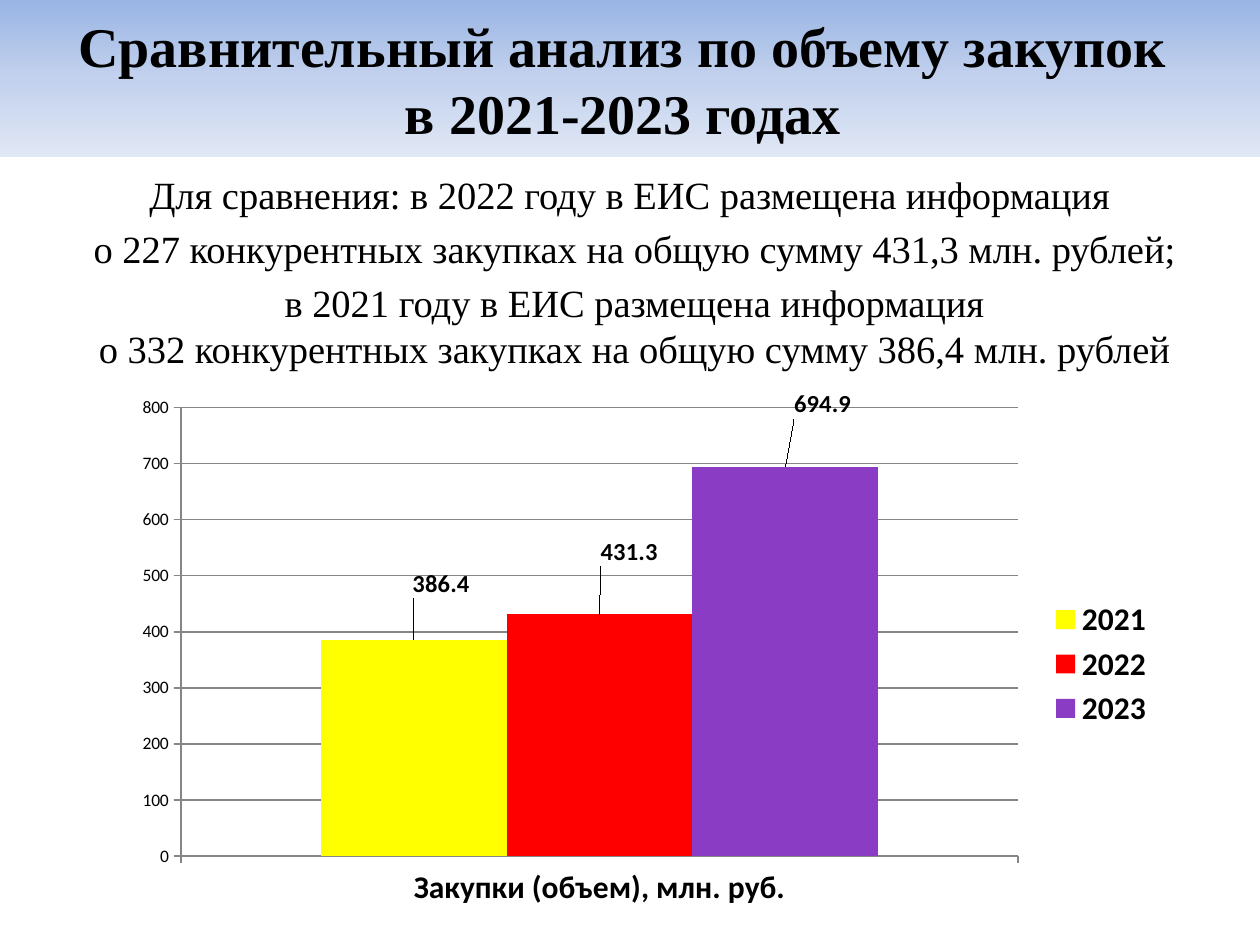
import copy

import pptx
import pptx.chart.data
import pptx.dml.color
import pptx.enum.chart
import pptx.enum.shapes
import pptx.enum.text
import pptx.oxml
import pptx.oxml.ns
import pptx.util
from pptx.util import Inches

TITLE = ["Сравнительный анализ по объему закупок \nв 2021-2023 годах "]
BODY = [
    "Для сравнения: в 2022 году в ЕИС размещена информация ",
    "о 227 конкурентных закупках на общую сумму 431,3 млн. рублей;",
    "в 2021 году в ЕИС размещена информация\n"
    "о 332 конкурентных закупках на общую сумму 386,4 млн. рублей",
]
GRADIENT = [(0, "9AB5E4"), (0.5, "C2D1ED"), (1, "E1E8F5")]
CATEGORY = "Закупки (объем), млн. руб."
SERIES = [
    ("2021", 386.4, "FFFF00", (0.026, -0.064)),
    ("2022", 431.3, "FF0000", (0.028, -0.076)),
    ("2023", 694.9, "8A3CC4", (0.035, -0.075)),
]
PLOT = {"x": 0.072, "y": 0.044, "w": 0.788, "h": 0.798}
GRID = "868686"


def rgb(value):
    return pptx.dml.color.RGBColor.from_string(value)


def set_font(font, size, bold=False, name="Calibri"):
    values = {"size": pptx.util.Pt(size), "bold": bold, "name": name}
    for key, value in values.items():
        setattr(font, key, value)
    font.color.rgb = rgb("000000")


def write(tf, lines, size, bold, anchor, before=0):
    tf.word_wrap = True
    tf.vertical_anchor = anchor
    for i, line in enumerate(lines):
        p = tf.add_paragraph() if i else tf.paragraphs[0]
        p.text = line
        p.alignment = pptx.enum.text.PP_ALIGN.CENTER
        p.space_before = pptx.util.Pt(before)
        for r in p.runs:
            set_font(r.font, size, bold, "Times New Roman")


def layout(modes, values):
    fields = [(key + "Mode", mode) for key, mode in modes.items()]
    fields += values.items()
    inner = "".join(f'<c:{key} val="{value}"/>' for key, value in fields)
    target = '<c:layoutTarget val="inner"/>' if modes else ""
    ns = pptx.oxml.ns.nsdecls("c")
    return pptx.oxml.parse_xml(
        f"<c:layout {ns}><c:manualLayout>{target}{inner}</c:manualLayout></c:layout>"
    )


def style_line(line):
    line.color.rgb = rgb(GRID)
    line.width = pptx.util.Pt(0.75)


def add_title(s):
    sp = s.shapes.add_shape(
        pptx.enum.shapes.MSO_SHAPE.RECTANGLE, 0, 0, Inches(10), Inches(1.25)
    )
    sp.shadow.inherit = False
    sp.line.fill.background()
    sp.fill.gradient()
    sp.fill.gradient_angle = 270
    stops = sp._element.spPr.find(".//" + pptx.oxml.ns.qn("a:gsLst"))
    stops.insert(1, copy.deepcopy(stops[0]))
    for stop, (position, color) in zip(sp.fill.gradient_stops, GRADIENT):
        stop.position = position
        stop.color.rgb = rgb(color)
    write(sp.text_frame, TITLE, 32, True, pptx.enum.text.MSO_ANCHOR.MIDDLE)


def add_body(s):
    sp = s.shapes.add_textbox(Inches(0.35), Inches(1.31), Inches(9.37), Inches(6.06))
    write(sp.text_frame, BODY, 22, False, pptx.enum.text.MSO_ANCHOR.TOP, 4.4)


def add_purchases_chart(s):
    data = pptx.chart.data.CategoryChartData()
    data.categories = [CATEGORY]
    for name, value, _, _ in SERIES:
        data.add_series(name, [value])
    chart = s.shapes.add_chart(
        pptx.enum.chart.XL_CHART_TYPE.COLUMN_CLUSTERED,
        Inches(0.83), Inches(3.04), Inches(8.43), Inches(4.46), data,
    ).chart
    set_font(chart.font, 10)
    chart.has_title = False
    chart.has_legend = True
    chart.legend.position = pptx.enum.chart.XL_LEGEND_POSITION.RIGHT
    chart.legend.include_in_layout = False
    set_font(chart.legend.font, 18, True)

    area = chart._chartSpace.chart.plotArea
    for old in area.findall(pptx.oxml.ns.qn("c:layout")):
        area.remove(old)
    area.insert(0, layout({"x": "edge", "y": "edge"}, PLOT))

    plot = chart.plots[0]
    plot.vary_by_categories = False
    plot.gap_width = 150
    plot.overlap = 0
    for series, (_, _, color, offset) in zip(plot.series, SERIES):
        series.format.fill.solid()
        series.format.fill.fore_color.rgb = rgb(color)
        label = series.points[0].data_label
        set_font(label.font, 14, True)
        label.position = pptx.enum.chart.XL_LABEL_POSITION.OUTSIDE_END
        element = series._element.find(".//" + pptx.oxml.ns.qn("c:dLbl"))
        element.insert(1, layout({}, dict(zip("xy", offset))))

    axis = chart.value_axis
    axis.minimum_scale, axis.maximum_scale, axis.major_unit = 0, 800, 100
    axis.has_major_gridlines = True
    style_line(axis.major_gridlines.format.line)
    for ax, size, bold in [(axis, 10, False), (chart.category_axis, 18, True)]:
        set_font(ax.tick_labels.font, size, bold)
        style_line(ax.format.line)
        ax.major_tick_mark = pptx.enum.chart.XL_TICK_MARK.OUTSIDE


def main():
    prs = pptx.Presentation()
    prs.slide_width, prs.slide_height = Inches(10), Inches(7.5)
    s = prs.slides.add_slide(prs.slide_layouts[6])
    add_title(s)
    add_body(s)
    add_purchases_chart(s)
    prs.save("out.pptx")


if __name__ == "__main__":
    main()
